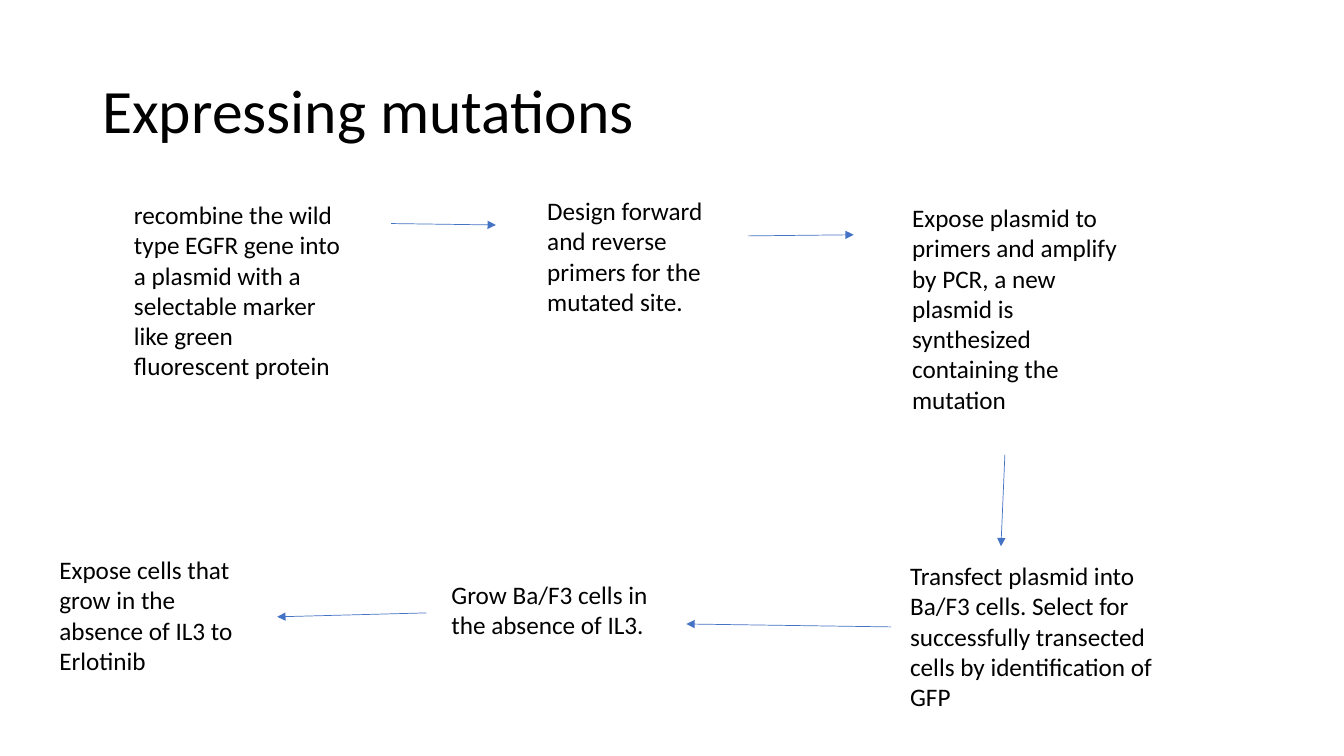
import pptx
import pptx.util
import pptx.dml.color
import pptx.enum.shapes
import pptx.enum.text
import pptx.oxml
import pptx.oxml.ns

Pt = pptx.util.Pt

STEPS = [
    ("recombine the wild type EGFR gene into a plasmid with a selectable marker "
     "like green fluorescent protein", (88.6, 139, 170, 139)),
    ("Design forward and reverse primers for the mutated site.", (383.8, 136.1, 136, 94.3)),
    ("Expose plasmid to primers and amplify by PCR, a new plasmid is synthesized "
     "containing the mutation", (644.4, 141.1, 173.5, 160)),
    ("Transfect plasmid into Ba/F3 cells. Select for successfully transected cells "
     "by identification of GFP", (643, 396.7, 197.3, 116.6)),
    ("Grow Ba/F3 cells in the absence of IL3.", (315.4, 410.4, 168.5, 51)),
    ("Expose cells that grow in the absence of IL3 to Erlotinib", (35.3, 392.4, 159, 94.3)),
]
ARROWS = [
    (279.4, 159.7, 354.2, 160.7),
    (534.2, 168.5, 609.8, 167.7),
    (717.8, 324.7, 715, 390.2),
    (636.5, 447.8, 490.3, 445.7),
    (304.6, 437.8, 198, 440.6),
]


class Deck:
    """Holds the style and the current slide, and draws its elements."""

    font = "Calibri"
    colors = {"text": "000000", "arrow": "4472C4"}

    def __init__(self, prs):
        self.s = prs.slides.add_slide(prs.slide_layouts[6])

    def color(self, name):
        return pptx.dml.color.RGBColor.from_string(self.colors[name])

    def text(self, text, box, size):
        sp = self.s.shapes.add_textbox(*map(Pt, box))
        tf = sp.text_frame
        tf.word_wrap = True
        p = tf.paragraphs[0]
        p.text = text
        p.font.name = self.font
        p.font.size = Pt(size)
        p.font.color.rgb = self.color("text")
        return tf

    def title(self, text, box):
        tf = self.text(text, box, 44)
        tf.vertical_anchor = pptx.enum.text.MSO_ANCHOR.MIDDLE
        tf.paragraphs[0].line_spacing = 0.9

    def step(self, text, box):
        tf = self.text(text, box, 18)
        tf.auto_size = pptx.enum.text.MSO_AUTO_SIZE.SHAPE_TO_FIT_TEXT

    def arrow(self, ends):
        kind = pptx.enum.shapes.MSO_CONNECTOR.STRAIGHT
        sp = self.s.shapes.add_connector(kind, *map(Pt, ends))
        sp.line.color.rgb = self.color("arrow")
        sp.line.width = Pt(0.5)
        qn = pptx.oxml.ns.qn
        head = sp.line._get_or_add_ln().makeelement(qn("a:tailEnd"), {"type": "triangle"})
        sp.line._get_or_add_ln().append(head)
        props = sp._element.spPr
        props.append(props.makeelement(qn("a:effectLst"), {}))


def main():
    prs = pptx.Presentation()
    prs.slide_width, prs.slide_height = Pt(960), Pt(540)
    deck = Deck(prs)
    deck.title("Expressing mutations", (66, 28.8, 828, 104.4))
    for text, box in STEPS:
        deck.step(text, box)
    for ends in ARROWS:
        deck.arrow(ends)
    prs.save("out.pptx")


if __name__ == "__main__":
    main()
